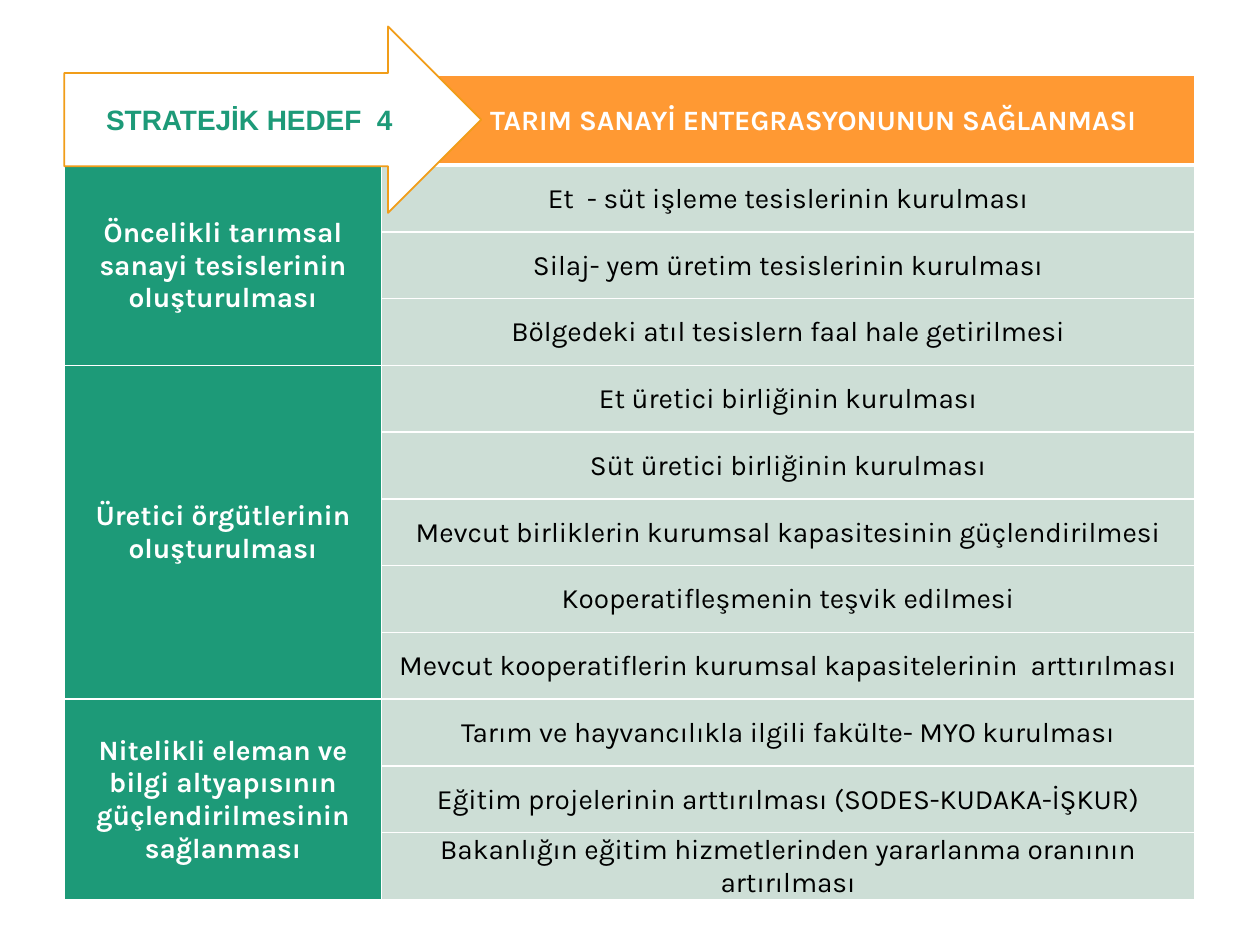
from lxml import etree
from pptx import Presentation
from pptx.dml.color import RGBColor
from pptx.enum.shapes import MSO_SHAPE
from pptx.enum.text import MSO_ANCHOR, PP_ALIGN
from pptx.oxml.ns import qn
from pptx.util import Inches, Pt

ARROW = MSO_SHAPE.RIGHT_ARROW
MIDDLE = MSO_ANCHOR.MIDDLE
CENTER = PP_ALIGN.CENTER

GOAL = "STRATEJİK HEDEF  4"
HEAD = "TARIM SANAYİ ENTEGRASYONUNUN SAĞLANMASI"
GROUPS = [
    ("Öncelikli tarımsal sanayi tesislerinin oluşturulması", [
        "Et  - süt işleme tesislerinin kurulması",
        "Silaj- yem üretim tesislerinin kurulması",
        "Bölgedeki atıl tesislern faal hale getirilmesi",
    ]),
    ("Üretici örgütlerinin oluşturulması", [
        "Et üretici birliğinin kurulması",
        "Süt üretici birliğinin kurulması",
        "Mevcut birliklerin kurumsal kapasitesinin güçlendirilmesi",
        "Kooperatifleşmenin teşvik edilmesi",
        "Mevcut kooperatiflerin kurumsal kapasitelerinin  arttırılması",
    ]),
    ("Nitelikli eleman ve bilgi altyapısının güçlendirilmesinin sağlanması", [
        "Tarım ve hayvancılıkla ilgili fakülte- MYO kurulması",
        "Eğitim projelerinin arttırılması (SODES-KUDAKA-İŞKUR)",
        "Bakanlığın eğitim hizmetlerinden yararlanma oranının artırılması",
    ]),
]
GREEN, PALE, ORANGE = "1D9A78", "CDDED6", "FF9933"
WHITE, BLACK, GOLD = "FFFFFF", "000000", "F19D19"
LEFT, TOP = 0.51, 0.6
COLS = (2.52, 6.45)
HEAD_H, ROW_H = 0.71, 0.53
SIZE = 16


def rgb(code):
    return RGBColor.from_string(code)


def paint(fill, code):
    fill.solid()
    fill.fore_color.rgb = rgb(code)


def write(frame, text, font, code, bold):
    para = frame.paragraphs[0]
    para.alignment = CENTER
    run = para.add_run()
    run.text = text
    run.font.name = font
    run.font.size = Pt(SIZE)
    run.font.bold = bold
    run.font.color.rgb = rgb(code)


def edge(cell, base):
    props = cell._tc.get_or_add_tcPr()
    for side, width in (("L", 1), ("R", 1), ("T", 1), ("B", base)):
        line = etree.SubElement(props, qn("a:ln" + side), w=str(Pt(width)))
        fill = etree.SubElement(line, qn("a:solidFill"))
        etree.SubElement(fill, qn("a:srgbClr"), val=WHITE)


def style(cell, code, base=1):
    edge(cell, base)
    paint(cell.fill, code)
    cell.vertical_anchor = MIDDLE
    cell.margin_left = cell.margin_right = cell.margin_top = Inches(0.01)
    cell.margin_bottom = 0


def add_grid(slide):
    count = sum(len(items) for _, items in GROUPS)
    grid = slide.shapes.add_table(
        count + 1, len(COLS), Inches(LEFT), Inches(TOP),
        Inches(sum(COLS)), Inches(HEAD_H + count * ROW_H)).table
    grid.first_row = grid.horz_banding = False
    for col, width in zip(grid.columns, COLS):
        col.width = Inches(width)
    for i, row in enumerate(grid.rows):
        row.height = Inches(ROW_H if i else HEAD_H)
        style(row.cells[0], GREEN, 1 if i else 3)
        style(row.cells[1], PALE if i else ORANGE, 1 if i else 3)

    head = grid.cell(0, 1)
    head.margin_left = Inches(0.41)
    write(head.text_frame, HEAD, "Karla", WHITE, True)
    first = 1
    for aim, items in GROUPS:
        last = first + len(items) - 1
        grid.cell(first, 0).merge(grid.cell(last, 0))
        write(grid.cell(first, 0).text_frame, aim, "Karla", WHITE, True)
        for i, item in enumerate(items, first):
            write(grid.cell(i, 1).text_frame, item, "Karla", BLACK, False)
        first = last + 1


def add_goal(slide):
    arrow = slide.shapes.add_shape(
        ARROW, Inches(LEFT), Inches(0.21), Inches(3.31), Inches(1.48))
    arrow.shadow.inherit = False
    paint(arrow.fill, WHITE)
    arrow.line.color.rgb = rgb(GOLD)
    arrow.line.width = Pt(1)
    arrow.text_frame.vertical_anchor = MIDDLE
    write(arrow.text_frame, GOAL, "Arial", GREEN, True)


def main():
    deck = Presentation()
    deck.slide_width, deck.slide_height = Inches(10), Inches(7.5)
    slide = deck.slides.add_slide(deck.slide_layouts[6])
    add_grid(slide)
    add_goal(slide)
    deck.save("out.pptx")


if __name__ == "__main__":
    main()
